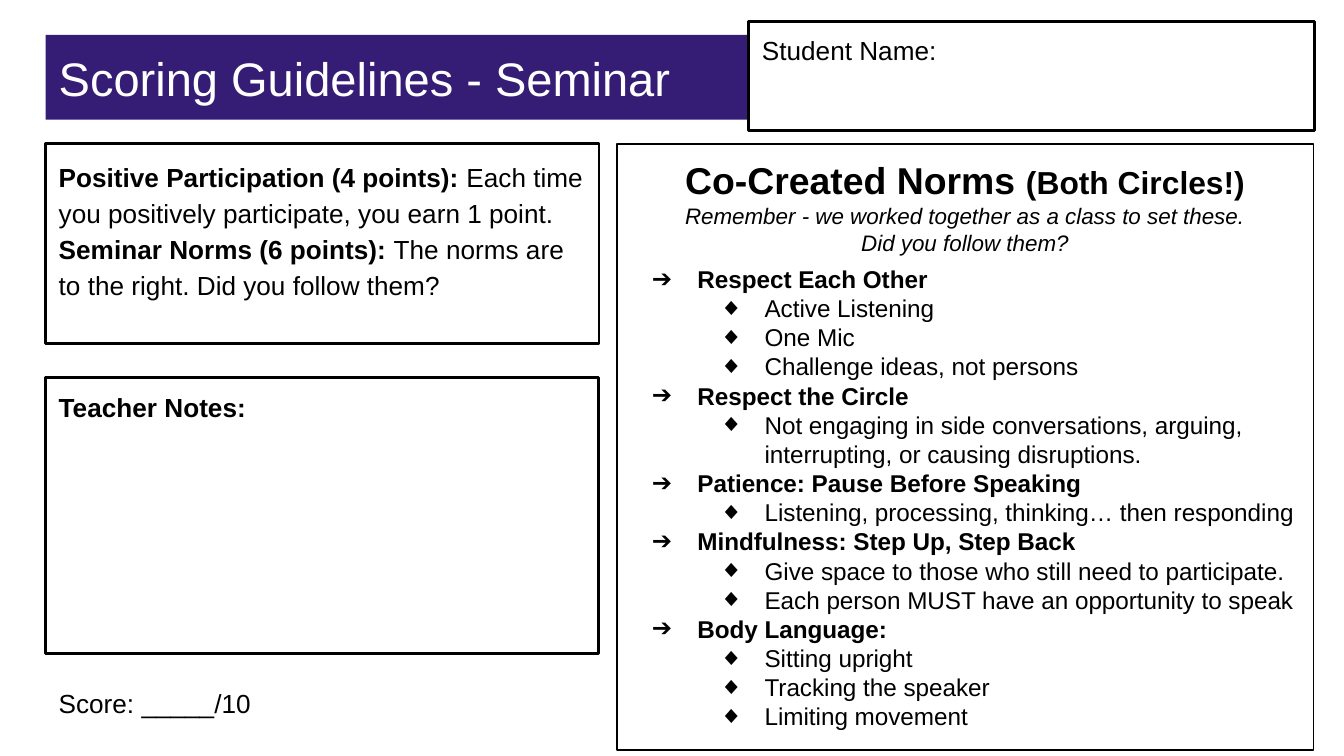
from dataclasses import dataclass
from typing import Optional

from lxml import etree
from pptx import Presentation
from pptx import util as u
from pptx.dml import color
from pptx.enum import shapes, text
from pptx.oxml import ns

PURPLE = color.RGBColor(0x35, 0x1C, 0x75)
WHITE = color.RGBColor(0xFF, 0xFF, 0xFF)
BLACK = color.RGBColor(0, 0, 0)

LEFT, TOP, WIDE = 0.86, 2.72, 10.46
HANG = 0.86


@dataclass
class Run:
    words: str
    size: float = 14
    bold: bool = False
    slant: bool = False
    tint: color.RGBColor = BLACK


@dataclass
class Line:
    runs: list[Run]
    align: text.PP_ALIGN = text.PP_ALIGN.LEFT
    space: float = 1
    before: float = 0
    level: int = 0
    bullet: str = ""


@dataclass
class Box:
    left: float
    top: float
    width: float
    height: float
    lines: list[Line]
    border: Optional[float] = 1.5
    fill: color.RGBColor = WHITE
    anchor: text.MSO_ANCHOR = text.MSO_ANCHOR.TOP


@dataclass
class Norm:
    name: str
    points: list[str]


NORMS = [
    Norm("Respect Each Other",
         ["Active Listening", "One Mic", "Challenge ideas, not persons"]),
    Norm("Respect the Circle",
         ["Not engaging in side conversations, arguing, interrupting, or causing disruptions."]),
    Norm("Patience: Pause Before Speaking",
         ["Listening, processing, thinking… then responding"]),
    Norm("Mindfulness: Step Up, Step Back",
         ["Give space to those who still need to participate.",
          "Each person MUST have an opportunity to speak"]),
    Norm("Body Language:",
         ["Sitting upright", "Tracking the speaker", "Limiting movement"]),
]


def list_norms(norms: list[Norm]) -> list[Line]:
    lines = []
    for norm in norms:
        gap = 0 if lines else 4.6
        lines.append(Line([Run(norm.name, 13, True)], before=gap, bullet="➔"))
        lines += [Line([Run(point, 13)], level=1, bullet="◆") for point in norm.points]
    return lines


def set_bullet(para, line: Line) -> None:
    props = para._p.get_or_add_pPr()
    margin = 1.27 * (line.level + 1) if line.bullet else 0
    props.set("marL", str(u.Cm(margin)))
    props.set("indent", str(u.Cm(-HANG if line.bullet else 0)))
    if not line.bullet:
        etree.SubElement(props, ns.qn("a:buNone"))
        return
    tint = etree.SubElement(props, ns.qn("a:buClr"))
    etree.SubElement(tint, ns.qn("a:srgbClr"), val=str(BLACK))
    etree.SubElement(props, ns.qn("a:buFont"), typeface="Arial")
    etree.SubElement(props, ns.qn("a:buChar"), char=line.bullet)


def add_line(para, line: Line) -> None:
    para.alignment = line.align
    para.level = line.level
    para.line_spacing = line.space
    para.space_before = u.Pt(line.before)
    para.space_after = u.Pt(0)
    set_bullet(para, line)
    for item in line.runs:
        run = para.add_run()
        run.text = item.words
        font = run.font
        font.name = "Arial"
        font.size = u.Pt(item.size)
        font.bold = item.bold
        font.italic = item.slant
        font.color.rgb = item.tint


def fill_box(shape, box: Box) -> None:
    shape.left, shape.top = u.Cm(box.left), u.Cm(box.top)
    shape.width, shape.height = u.Cm(box.width), u.Cm(box.height)
    shape.shadow.inherit = False
    shape.fill.solid()
    shape.fill.fore_color.rgb = box.fill
    if box.border is None:
        shape.line.fill.background()
    else:
        shape.line.color.rgb = BLACK
        shape.line.width = u.Pt(box.border)
    frame = shape.text_frame
    frame.word_wrap = True
    frame.auto_size = text.MSO_AUTO_SIZE.NONE
    frame.vertical_anchor = box.anchor
    frame.margin_left = frame.margin_right = u.Cm(0.25)
    frame.margin_top = frame.margin_bottom = u.Cm(0.25)
    for place, line in enumerate(box.lines):
        add_line(frame.add_paragraph() if place else frame.paragraphs[0], line)


def main() -> None:
    deck = Presentation()
    deck.slide_width, deck.slide_height = u.Cm(25.4), u.Cm(14.29)
    slide = deck.slides.add_slide(deck.slide_layouts[3])
    title, rubric, norms = slide.placeholders

    center = text.PP_ALIGN.CENTER
    fill_box(title, Box(
        LEFT, 0.66, 23.67, 1.6,
        [Line([Run("Scoring Guidelines - Seminar", 25.2, tint=WHITE)])],
        border=None, fill=PURPLE, anchor=text.MSO_ANCHOR.MIDDLE))
    fill_box(rubric, Box(LEFT, TOP, WIDE, 3.78, [
        Line([Run("Positive Participation (4 points): ", bold=True),
              Run("Each time you positively participate, you earn 1 point.")], space=1.15),
        Line([Run("Seminar Norms (6 points): ", bold=True),
              Run("The norms are to the right. Did you follow them?")], space=1.15),
    ]))
    fill_box(norms, Box(11.66, TOP, 13.16, 11.46, [
        Line([Run("Co-Created Norms ", 20, True), Run("(Both Circles!)", 17, True)], center),
        Line([Run("Remember - we worked together as a class to set these.", 12, slant=True)],
             center),
        Line([Run("Did you follow them?", 12, slant=True)], center),
        *list_norms(NORMS),
    ], border=0.75))

    notes = Box(LEFT, 7.14, WIDE, 5.21, [Line([Run("Teacher Notes:", bold=True)])])
    student = Box(14.15, 0.41, 10.69, 2.06, [Line([Run("Student Name:")])])
    score = Box(LEFT, 12.75, WIDE, 1.12, [Line([Run("Score: _____/10")])], border=None)
    for box in (notes, student, score):
        shape = slide.shapes.add_shape(shapes.MSO_SHAPE.RECTANGLE, 0, 0, 0, 0)
        fill_box(shape, box)

    deck.save("out.pptx")


if __name__ == "__main__":
    main()
